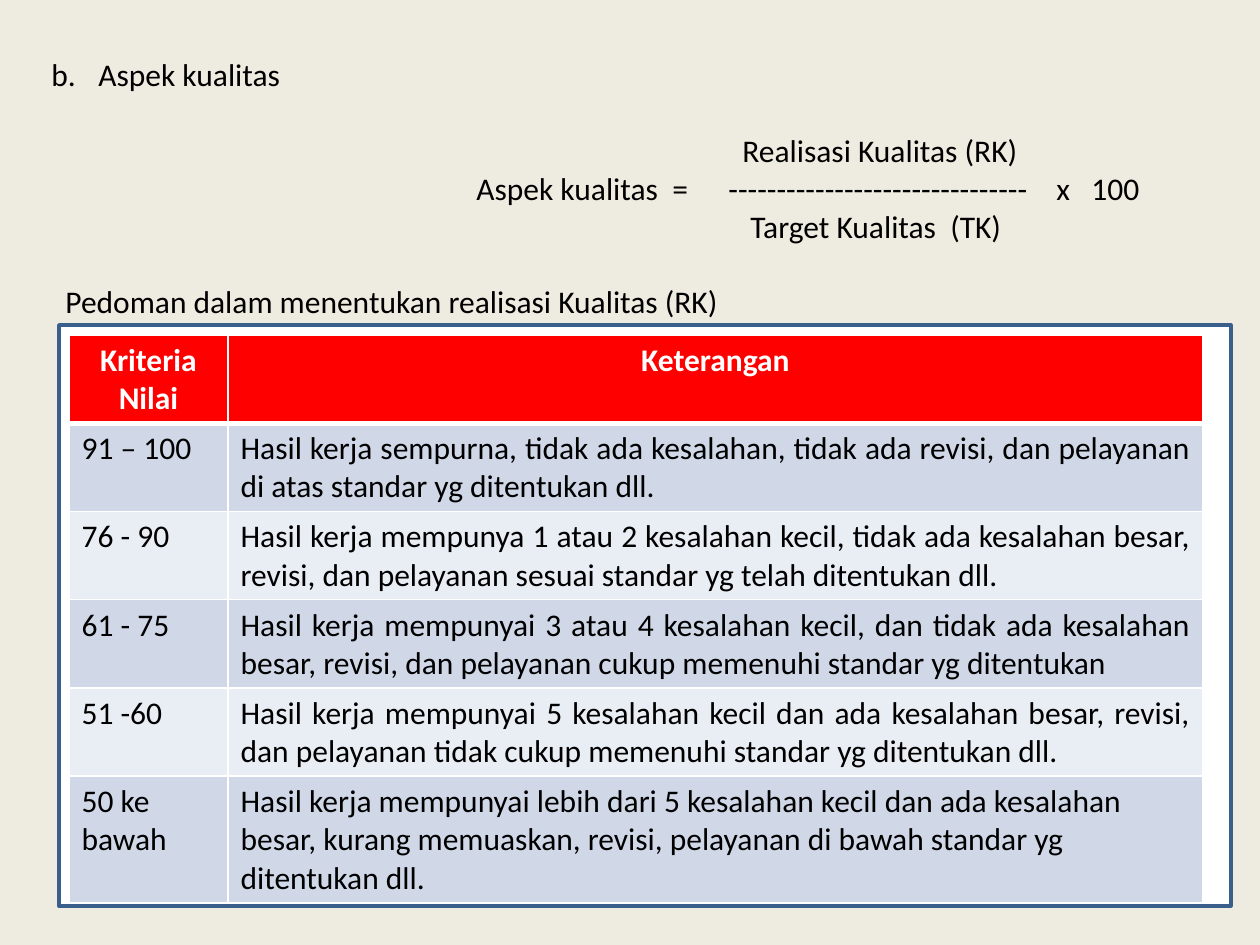
from dataclasses import dataclass

from lxml import etree
from pptx import Presentation
from pptx.dml.color import RGBColor
from pptx.enum.shapes import MSO_SHAPE
from pptx.enum.text import PP_ALIGN
from pptx.oxml.ns import qn
from pptx.util import Emu, Pt

SCALE = 914400 / 126
RECTANGLE = MSO_SHAPE.RECTANGLE
LEFT, CENTER, JUSTIFY = PP_ALIGN.LEFT, PP_ALIGN.CENTER, PP_ALIGN.JUSTIFY
BLACK, WHITE, RED = "000000", "FFFFFF", "FF0000"
BAND_COLORS = ("D0D8E8", "E9EDF4")
BLANK_LINE = 21.7


@dataclass
class Criterion:
    score: str
    description: str
    align: PP_ALIGN = JUSTIFY


@dataclass
class Line:
    text: str
    indent: int = 0
    hanging: int = 0
    space_before: float = 0
    numbered_from: int = 0


@dataclass
class TextBlock:
    left: int
    top: int
    width: int
    height: int
    lines: list[Line]


TEXT_BLOCKS = [
    TextBlock(39, 49, 1191, 394, [
        Line("Aspek kualitas", indent=47, hanging=47, numbered_from=2),
        Line("Realisasi Kualitas (RK)", indent=691, space_before=BLANK_LINE),
        Line("Aspek kualitas  =\t-------------------------------", indent=425),
        Line("Target Kualitas  (TK)", indent=699),
        Line("Pedoman dalam menentukan realisasi Kualitas (RK)", indent=14,
             space_before=BLANK_LINE),
    ]),
    TextBlock(1044, 163, 40, 52, [Line("x")]),
    TextBlock(1079, 163, 80, 52, [Line("100")]),
]

CRITERIA = [
    Criterion("91 – 100", "Hasil kerja sempurna, tidak ada kesalahan, tidak ada revisi, "
              "dan pelayanan di atas standar yg ditentukan dll."),
    Criterion("76 - 90", "Hasil kerja mempunya 1 atau 2 kesalahan kecil, tidak ada kesalahan "
              "besar, revisi, dan pelayanan sesuai standar yg telah ditentukan dll."),
    Criterion("61 - 75", "Hasil kerja mempunyai 3 atau 4 kesalahan kecil, dan tidak ada "
              "kesalahan besar, revisi, dan pelayanan cukup memenuhi standar yg ditentukan"),
    Criterion("51 -60", "Hasil kerja mempunyai 5 kesalahan kecil dan ada kesalahan besar, "
              "revisi, dan pelayanan tidak cukup memenuhi standar yg ditentukan dll."),
    Criterion("50 ke bawah", "Hasil kerja mempunyai lebih dari 5 kesalahan kecil dan ada "
              "kesalahan besar, kurang memuaskan, revisi, pelayanan di bawah standar yg "
              "ditentukan dll.", LEFT),
]


def px(length: int) -> Emu:
    return Emu(round(length * SCALE))


def rgb(color: str) -> RGBColor:
    return RGBColor.from_string(color)


def write(paragraph, text: str, *, color: str = BLACK, bold: bool = False,
          align: PP_ALIGN = LEFT, space_before: float = 0) -> None:
    paragraph.alignment = align
    paragraph.space_before = Pt(space_before)
    run = paragraph.add_run()
    run.text = text
    run.font.name = "Calibri"
    run.font.size = Pt(18)
    run.font.bold = bold
    run.font.color.rgb = rgb(color)


def set_layout(paragraph, line: Line) -> None:
    properties = paragraph._p.get_or_add_pPr()
    properties.set("marL", str(px(line.indent)))
    properties.set("indent", str(-px(line.hanging)))
    if line.numbered_from:
        etree.SubElement(properties, qn("a:buAutoNum"), type="alphaLcPeriod",
                         startAt=str(line.numbered_from))


def draw_text_block(slide, block: TextBlock) -> None:
    frame = slide.shapes.add_textbox(
        px(block.left), px(block.top), px(block.width), px(block.height)).text_frame
    frame.word_wrap = True
    for index, line in enumerate(block.lines):
        paragraph = frame.add_paragraph() if index else frame.paragraphs[0]
        write(paragraph, line.text, space_before=line.space_before)
        set_layout(paragraph, line)


def draw_table_frame(slide) -> None:
    panel = slide.shapes.add_shape(RECTANGLE, px(59), px(325), px(1172), px(581))
    panel.shadow.inherit = False
    panel.fill.solid()
    panel.fill.fore_color.rgb = rgb(WHITE)
    panel.line.color.rgb = rgb("3A5F8C")
    panel.line.width = Pt(2)


def set_borders(cell, bottom: int) -> None:
    properties = cell._tc.get_or_add_tcPr()
    for side, width in (("L", 1), ("R", 1), ("T", 1), ("B", bottom)):
        border = etree.SubElement(properties, qn(f"a:ln{side}"), w=str(Pt(width)))
        fill = etree.SubElement(border, qn("a:solidFill"))
        etree.SubElement(fill, qn("a:srgbClr"), val=WHITE)


def fill_cell(cell, text: str, fill: str, *, bottom: int = 1, **text_format) -> None:
    set_borders(cell, bottom)
    cell.fill.solid()
    cell.fill.fore_color.rgb = rgb(fill)
    write(cell.text_frame.paragraphs[0], text, **text_format)


def draw_criteria(slide, criteria: list[Criterion]) -> None:
    column_widths = (159, 975)
    row_heights = [88] * len(criteria) + [126]
    table = slide.shapes.add_table(
        len(row_heights), len(column_widths), px(69), px(335),
        px(sum(column_widths)), px(sum(row_heights))).table
    for column, width in zip(table.columns, column_widths):
        column.width = px(width)
    for row, height in zip(table.rows, row_heights):
        row.height = px(height)

    for column, heading in enumerate(("Kriteria Nilai", "Keterangan")):
        fill_cell(table.cell(0, column), heading, RED, bottom=3,
                  color=WHITE, bold=True, align=CENTER)
    for index, criterion in enumerate(criteria):
        band = BAND_COLORS[index % len(BAND_COLORS)]
        fill_cell(table.cell(index + 1, 0), criterion.score, band)
        fill_cell(table.cell(index + 1, 1), criterion.description, band,
                  align=criterion.align)


def main() -> None:
    presentation = Presentation()
    presentation.slide_width, presentation.slide_height = px(1260), px(945)
    slide = presentation.slides.add_slide(presentation.slide_layouts[6])
    slide.background.fill.solid()
    slide.background.fill.fore_color.rgb = rgb("EEECE1")
    for block in TEXT_BLOCKS:
        draw_text_block(slide, block)
    draw_table_frame(slide)
    draw_criteria(slide, CRITERIA)
    presentation.save("out.pptx")


if __name__ == "__main__":
    main()
